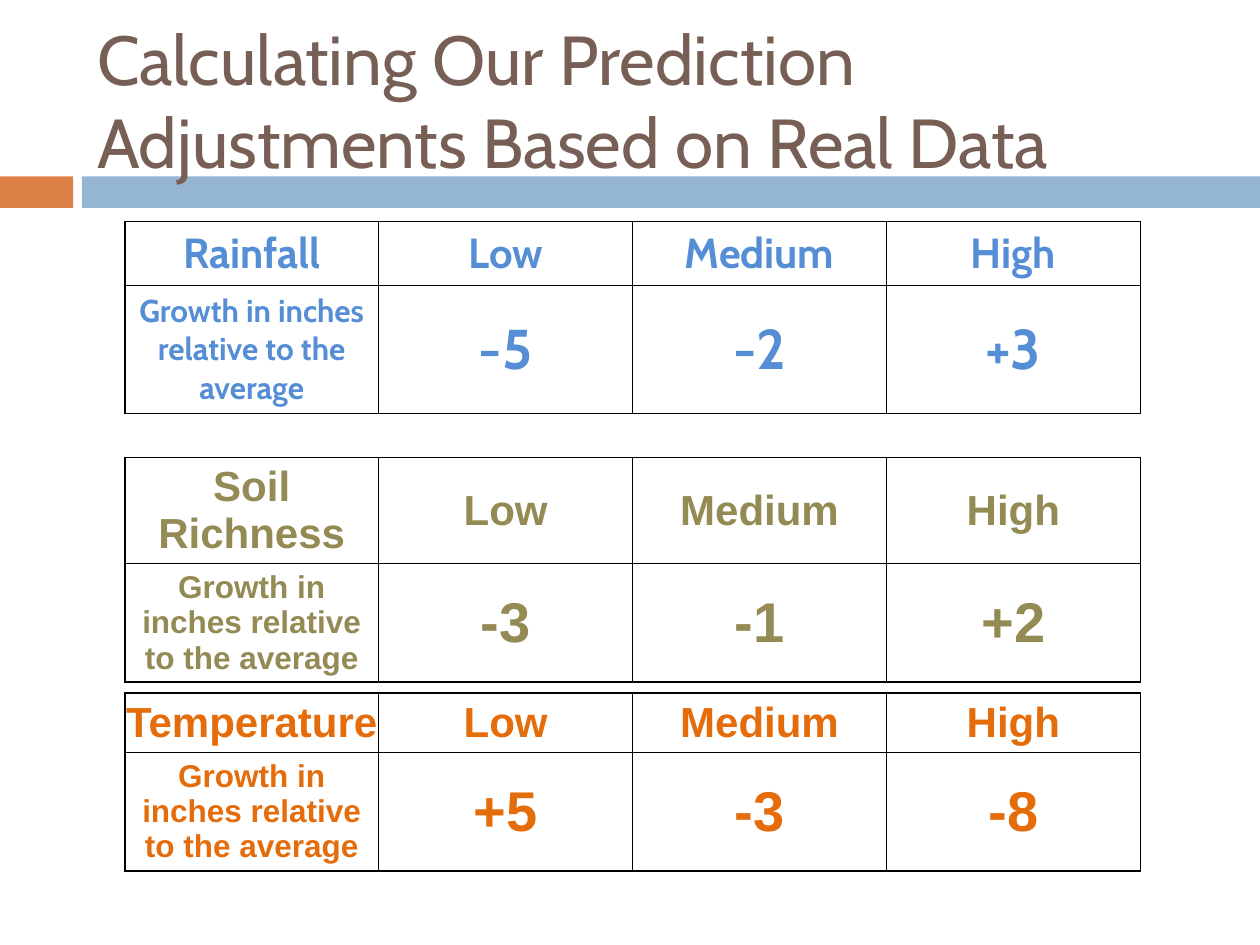
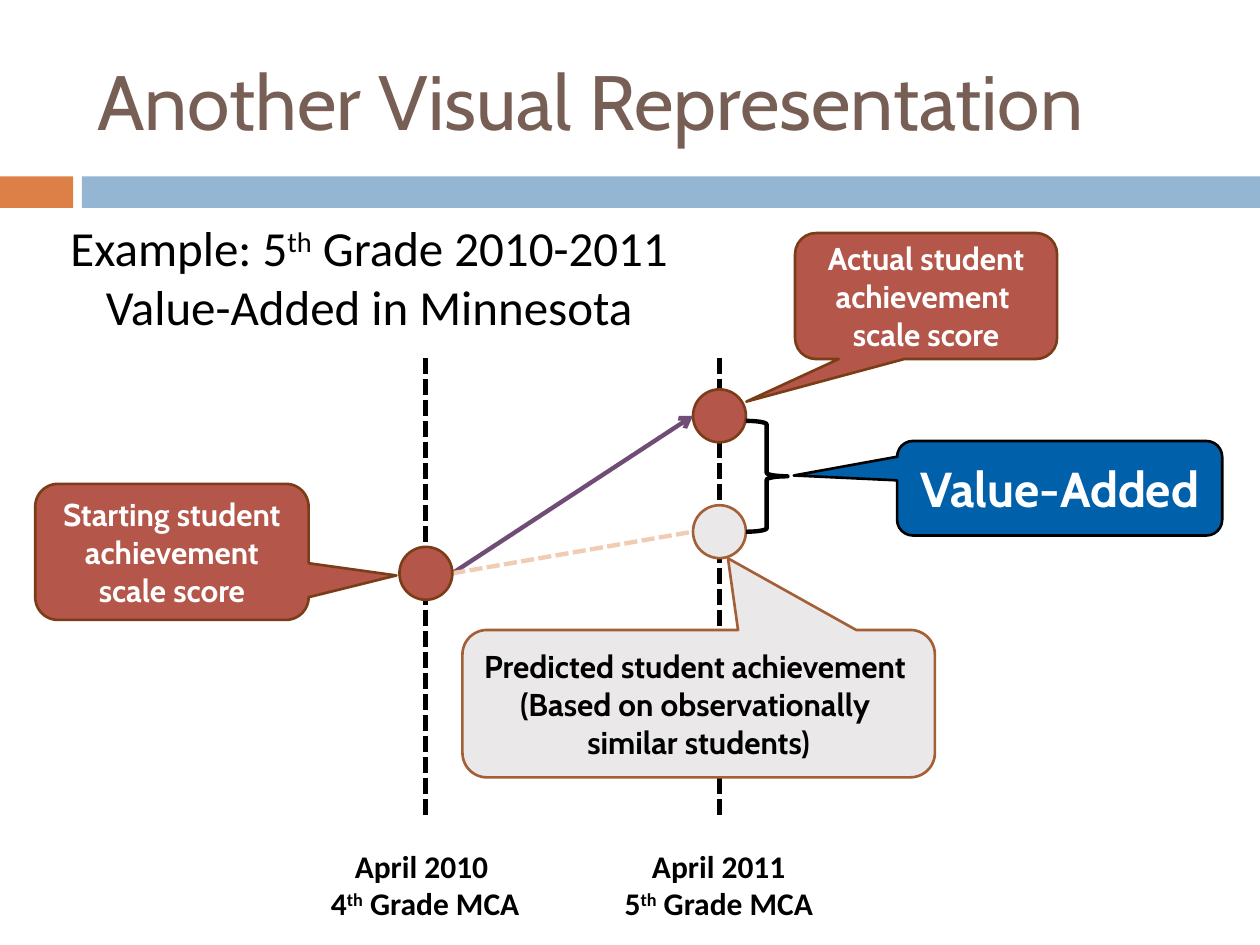
import lxml.etree
import pptx
import pptx.dml.color
import pptx.enum.dml
import pptx.enum.shapes
import pptx.enum.text
import pptx.oxml.ns
import pptx.util

Inches = pptx.util.Inches
Pt = pptx.util.Pt
RGBColor = pptx.dml.color.RGBColor
SHAPE = pptx.enum.shapes.MSO_SHAPE
CENTER = pptx.enum.text.PP_ALIGN.CENTER
MIDDLE = pptx.enum.text.MSO_ANCHOR.MIDDLE
qn = pptx.oxml.ns.qn

BLACK = RGBColor(0x00, 0x00, 0x00)
WHITE = RGBColor(0xFF, 0xFF, 0xFF)
TITLE_BROWN = RGBColor(0x77, 0x5F, 0x55)
BAND_ORANGE = RGBColor(0xDD, 0x80, 0x47)
BAND_BLUE = RGBColor(0x94, 0xB6, 0xD2)
RAIN_BLUE = RGBColor(0x55, 0x8E, 0xD5)
SOIL_OLIVE = RGBColor(0x94, 0x8A, 0x54)
HEAT_ORANGE = RGBColor(0xE4, 0x6C, 0x0A)
ACTUAL_RED = RGBColor(0xB4, 0x56, 0x4A)
ACTUAL_EDGE = RGBColor(0x7B, 0x3D, 0x17)
PREDICTED_GRAY = RGBColor(0xEA, 0xE8, 0xE8)
PREDICTED_EDGE = RGBColor(0xA3, 0x5F, 0x35)
PREDICTED_PATH = RGBColor(0xF1, 0xCC, 0xB5)
GROWTH_PURPLE = RGBColor(0x70, 0x4D, 0x74)
VALUE_BLUE = RGBColor(0x00, 0x60, 0xAA)

CALLOUT_FONT = {"name": "Cabin", "size": Pt(18), "bold": True, "color": WHITE}
LABEL_FONT = {"name": "Calibri", "size": Pt(18), "bold": True, "color": BLACK}
ACTUAL_STYLE = (ACTUAL_RED, ACTUAL_EDGE)
PREDICTED_STYLE = (PREDICTED_GRAY, PREDICTED_EDGE)

BANDS = [(0, 0.58, BAND_ORANGE), (0.65, 9.35, BAND_BLUE)]
TITLE_BOX = (0.67, 0.25, 8.92, 1.08)

TABLE_LEFT, TABLE_TOP, TABLE_STEP = 0.99, 1.76, 1.87
TABLE_WIDTH, ROW_HEIGHT = 8.06, 0.41
LEVELS = ["Low", "Medium", "High"]
FACTORS = [
    ("Rainfall", ["-5", "-2", "+3"], "Cabin", RAIN_BLUE),
    ("Soil Richness", ["-3", "-1", "+2"], "Arial", SOIL_OLIVE),
    ("Temperature", ["+5", "-3", "-8"], "Arial", HEAT_ORANGE),
]

DOT = 0.42
AXIS_TOP, AXIS_BOTTOM = 2.84, 6.5


def inches(box):
    return [Inches(length) for length in box]


def format_font(font, values):
    for name, value in values.items():
        if name == "color":
            font.color.rgb = value
        else:
            setattr(font, name, value)


def write_text(frame, text, font, align=CENTER):
    """Fill a frame: newline starts a paragraph, \\v breaks a line, ^x^ raises x."""
    for number, content in enumerate(text.split("\n")):
        para = frame.paragraphs[0] if number == 0 else frame.add_paragraph()
        para.alignment = align
        for order, piece in enumerate(content.split("^")):
            for line_number, line in enumerate(piece.split("\v")):
                if line_number:
                    para.add_line_break()
                span = para.add_run()
                span.text = line
                format_font(span.font, font)
                if order % 2:
                    span.font._element.set("baseline", "30000")


def add_figure(page, kind, box, fill=None, edge=None, weight=1.5):
    figure = page.shapes.add_shape(kind, *inches(box))
    figure.shadow.inherit = False
    if fill is None:
        figure.fill.background()
    else:
        figure.fill.solid()
        figure.fill.fore_color.rgb = fill
    if edge is None:
        figure.line.fill.background()
    else:
        figure.line.color.rgb = edge
        figure.line.width = Pt(weight)
    return figure


def add_line(page, start, end, color, weight, dashed=False, arrow=False):
    line = page.shapes.add_connector(
        pptx.enum.shapes.MSO_CONNECTOR.STRAIGHT, *inches(start + end))
    line.line.color.rgb = color
    line.line.width = Pt(weight)
    if dashed:
        line.line.dash_style = pptx.enum.dml.MSO_LINE.SQUARE_DOT
    properties = line.element.spPr
    if arrow:
        lxml.etree.SubElement(
            properties.find(qn("a:ln")), qn("a:tailEnd"), type="arrow")
    lxml.etree.SubElement(properties, qn("a:effectLst"))


def add_text(page, box, text, font, wrap=True, anchor=MIDDLE):
    frame = page.shapes.add_textbox(*inches(box)).text_frame
    frame.word_wrap = wrap
    frame.vertical_anchor = anchor
    write_text(frame, text, font)


def add_page(deck, title, size):
    page = deck.slides.add_slide(deck.slide_layouts.get_by_name("Title Only"))
    heading = page.shapes.title
    for name, value in zip(("left", "top", "width", "height"), inches(TITLE_BOX)):
        setattr(heading, name, value)
    heading.text_frame.vertical_anchor = MIDDLE
    write_text(heading.text_frame, title,
               {"name": "Cabin", "size": Pt(size), "color": TITLE_BROWN},
               pptx.enum.text.PP_ALIGN.LEFT)
    return page


def add_bands_to_layout(deck, page):
    """Draw the bands once and hand them to the layout behind every page."""
    layout_tree = page.slide_layout.shapes.element
    for number, (left, width, color) in enumerate(BANDS):
        band = add_figure(page, SHAPE.RECTANGLE, (left, 1.4, width, 0.25), color)
        band.element.nvSpPr.cNvPr.set("id", str(100 + number))
        layout_tree.insert(2 + number, band.element)


def style_cell(cell):
    properties = cell._tc.get_or_add_tcPr()
    for side in ("a:lnL", "a:lnR", "a:lnT", "a:lnB"):
        border = lxml.etree.SubElement(properties, qn(side), w=str(Pt(1)))
        fill = lxml.etree.SubElement(border, qn("a:solidFill"))
        lxml.etree.SubElement(fill, qn("a:srgbClr"), val=str(BLACK))
    cell.fill.background()
    cell.vertical_anchor = MIDDLE


def add_factor_table(page, top, factor, changes, font_name, color):
    rows = [[factor] + LEVELS,
            ["Growth in inches relative to the average"] + changes]
    box = (TABLE_LEFT, top, TABLE_WIDTH, ROW_HEIGHT * len(rows))
    table = page.shapes.add_table(len(rows), len(rows[0]), *inches(box)).table
    table.first_row = table.horz_banding = False
    for row, texts in enumerate(rows):
        for column, text in enumerate(texts):
            cell = table.cell(row, column)
            style_cell(cell)
            size = 24 if row == 0 else 18 if column == 0 else 32
            write_text(cell.text_frame, text, {
                "name": font_name, "size": Pt(size), "bold": True, "color": color})
    return table


def build_adjustments(deck):
    page = add_page(
        deck, "Calculating Our Prediction Adjustments Based on Real Data", 39.6)
    add_bands_to_layout(deck, page)
    for number, factor in enumerate(FACTORS):
        table = add_factor_table(page, TABLE_TOP + number * TABLE_STEP, *factor)
    temperature = table.cell(0, 0)
    temperature.margin_left = temperature.margin_right = 0


def add_axis(page, x, label):
    add_line(page, (x, AXIS_TOP), (x, AXIS_BOTTOM), BLACK, 3, dashed=True)
    add_text(page, (x - 0.87, 6.67, 1.73, 0.71), label, LABEL_FONT,
             wrap=False, anchor=pptx.enum.text.MSO_ANCHOR.TOP)


def add_score(page, center, style):
    x, y = center
    add_figure(page, SHAPE.OVAL, (x - DOT / 2, y - DOT / 2, DOT, DOT), *style)


def add_callout(page, box, pointer, text, style, **font):
    """Add a rounded callout; pointer is its tip as a share of the box from its centre."""
    callout = add_figure(page, SHAPE.ROUNDED_RECTANGULAR_CALLOUT, box, *style)
    for number, share in enumerate(pointer):
        callout.adjustments[number] = share
    write_text(callout.text_frame, text, CALLOUT_FONT | font)


def build_value_added(deck):
    page = add_page(deck, "Another Visual Representation", 44)
    start, actual, predicted = (3.38, 4.55), (5.71, 3.3), (5.71, 4.22)
    start_edge = (start[0] + DOT / 2, start[1])

    add_axis(page, actual[0], "April 2011\n5^th^ Grade MCA")
    add_axis(page, start[0], "April 2010 \n4^th^ Grade MCA")
    for center, style, path_format in (
            (actual, ACTUAL_STYLE, {"color": GROWTH_PURPLE, "arrow": True}),
            (predicted, PREDICTED_STYLE, {"color": PREDICTED_PATH, "dashed": True})):
        add_score(page, center, style)
        add_line(page, start_edge, (center[0] - DOT / 2, center[1]),
                 weight=2.5, **path_format)
    add_score(page, start, ACTUAL_STYLE)

    add_callout(page, (6.31, 1.85, 2.08, 1), (-0.686, 0.838),
                "Actual student achievement \vscale score", ACTUAL_STYLE)
    add_callout(page, (3.67, 5, 3.75, 1.17), (0.062, -0.986),
                "Predicted student achievement \v(Based on observationally "
                "\vsimilar students)", PREDICTED_STYLE, color=BLACK)
    add_callout(page, (0.28, 3.84, 2.17, 1.08), (0.821, 0.173),
                "Starting student achievement scale score", ACTUAL_STYLE)

    add_figure(page, SHAPE.RIGHT_BRACE, (5.92, 3.34, 0.33, 0.88),
               edge=BLACK, weight=2.5)
    add_callout(page, (7.12, 3.5, 2.58, 0.75), (-0.818, -0.135),
                "Value-Added", (VALUE_BLUE, BLACK), size=Pt(28))
    add_text(page, (0.25, 1.82, 5.36, 0.75),
             "Example: 5^th^ Grade 2010-2011 Value-Added in Minnesota",
             LABEL_FONT | {"size": Pt(28), "bold": False})


def main():
    deck = pptx.Presentation()
    deck.slide_width, deck.slide_height = inches((10, 7.5))
    build_adjustments(deck)
    build_value_added(deck)
    deck.save("out.pptx")


if __name__ == "__main__":
    main()
